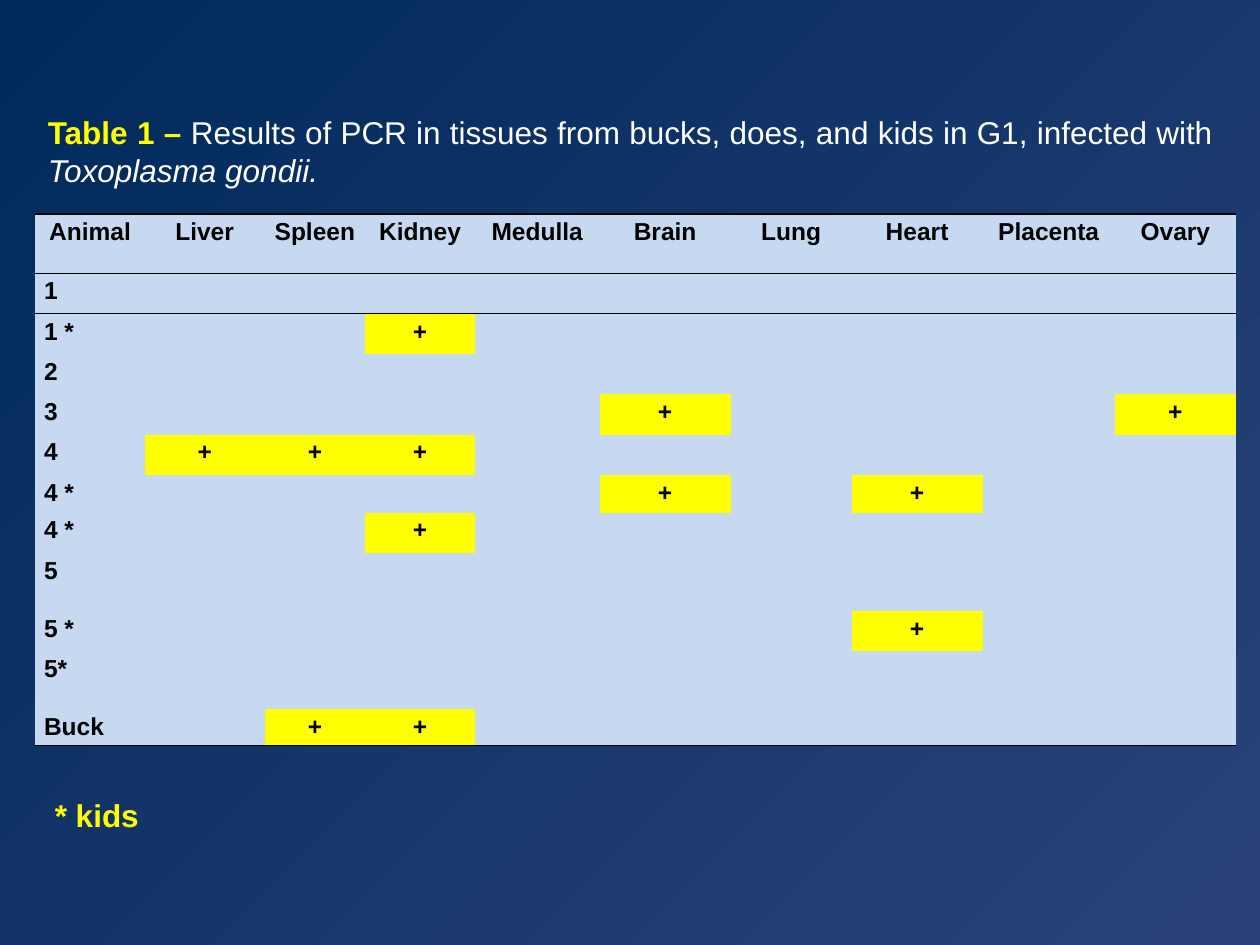
from lxml import etree
from pptx import Presentation
from pptx.dml.color import RGBColor
from pptx.enum import text as t
from pptx.oxml import ns
from pptx.util import Inches, Pt

NAVY = RGBColor(0x00, 0x29, 0x5C)
INDIGO = RGBColor(0x2A, 0x42, 0x78)
PALE_BLUE = RGBColor(0xC6, 0xD9, 0xF1)
YELLOW = RGBColor(0xFF, 0xFF, 0x00)
WHITE = RGBColor(0xFF, 0xFF, 0xFF)
BLACK = RGBColor(0x00, 0x00, 0x00)

NO_STYLE_NO_GRID = "{2D5ABB26-0587-4C30-8999-92F81FD0307C}"

TISSUES = ["Liver", "Spleen", "Kidney", "Medulla", "Brain",
           "Lung", "Heart", "Placenta", "Ovary"]
# Each animal with the tissues that tested positive
RESULTS = [
    ("1", []),
    ("1 *", ["Kidney"]),
    ("2", []),
    ("3", ["Brain", "Ovary"]),
    ("4", ["Liver", "Spleen", "Kidney"]),
    ("4 *", ["Brain", "Heart"]),
    ("4 *", ["Kidney"]),
    ("5", []),
    ("5 *", ["Heart"]),
    ("5*", []),
    ("Buck", ["Spleen", "Kidney"]),
]
COLUMN_WIDTHS = [0.87, 0.95, 0.8, 0.87, 0.99, 1.04, 0.96, 1.04, 1.05, 0.96]
ROW_HEIGHTS = [0.47, 0.32, 0.32, 0.32, 0.32, 0.32, 0.3, 0.32, 0.46, 0.32, 0.46, 0.29]


class SlideBuilder:
    """Holds the text style and the current slide."""

    font_name = "Arial"
    text_size = 18
    table_size = 14

    def __init__(self, presentation):
        self.slide = presentation.slides.add_slide(presentation.slide_layouts[5])

    def background(self, inner, outer):
        fill = self.slide.background.fill
        fill.gradient()
        for stop, color in zip(fill.gradient_stops, (inner, outer)):
            stop.color.rgb = color
        # Radiate from the bottom right corner
        linear = self.slide.element.find(".//" + ns.qn("a:lin"))
        circle = etree.Element(ns.qn("a:path"), {"path": "circle"})
        etree.SubElement(circle, ns.qn("a:fillToRect"), {"l": "100000", "t": "100000"})
        linear.getparent().replace(linear, circle)

    def run(self, paragraph, wording, color, size=None, bold=False, italic=False, font=None):
        run = paragraph.add_run()
        run.text = wording
        run.font.name = font or self.font_name
        run.font.size = Pt(size or self.text_size)
        run.font.bold = bold
        run.font.italic = italic
        run.font.color.rgb = color

    def place(self, shape, left, top, width, height):
        shape.left, shape.top = Inches(left), Inches(top)
        shape.width, shape.height = Inches(width), Inches(height)
        frame = shape.text_frame
        frame.word_wrap = True
        frame.auto_size = t.MSO_AUTO_SIZE.SHAPE_TO_FIT_TEXT
        return frame.paragraphs[0]

    def title(self, *box):
        shape = self.slide.shapes.title
        paragraph = self.place(shape, *box)
        shape.text_frame.vertical_anchor = t.MSO_ANCHOR.MIDDLE
        paragraph.alignment = t.PP_ALIGN.JUSTIFY
        return paragraph

    def text_box(self, *box):
        shape = self.slide.shapes.add_textbox(0, 0, 0, 0)
        return self.place(shape, *box)

    def table(self, left, top, widths, heights):
        frame = self.slide.shapes.add_table(
            len(heights), len(widths), Inches(left), Inches(top),
            Inches(sum(widths)), Inches(sum(heights)))
        table = frame.table
        table.first_row = table.horz_banding = False
        frame.element.find(".//" + ns.qn("a:tableStyleId")).text = NO_STYLE_NO_GRID
        for column, width in zip(table.columns, widths):
            column.width = Inches(width)
        for row, height in zip(table.rows, heights):
            row.height = Inches(height)
        return table

    def border(self, cell, side):
        properties = cell._tc.get_or_add_tcPr()
        line = etree.SubElement(properties, ns.qn("a:ln" + side), {"w": str(Pt(1))})
        solid = etree.SubElement(line, ns.qn("a:solidFill"))
        etree.SubElement(solid, ns.qn("a:srgbClr"), {"val": str(BLACK)})

    def cell(self, cell, wording, fill, centered, sides):
        for side in sides:
            self.border(cell, side)
        cell.fill.solid()
        cell.fill.fore_color.rgb = fill
        cell.margin_left = cell.margin_right = Inches(0.07)
        cell.margin_top = cell.margin_bottom = 0
        paragraph = cell.text_frame.paragraphs[0]
        paragraph.line_spacing = 1.15
        if centered:
            paragraph.alignment = t.PP_ALIGN.CENTER
        if wording:
            self.run(paragraph, wording, BLACK, self.table_size, bold=True)
        else:
            # Keep an empty cell from stretching its row
            end = etree.SubElement(paragraph._p, ns.qn("a:endParaRPr"))
            end.set("sz", str(self.table_size * 100))


def main():
    presentation = Presentation()
    presentation.slide_width, presentation.slide_height = Inches(10), Inches(7.5)
    builder = SlideBuilder(presentation)
    builder.background(INDIGO, NAVY)

    # Results table
    table = builder.table(0.28, 1.7, COLUMN_WIDTHS, ROW_HEIGHTS)
    rows = [["Animal"] + TISSUES]
    for animal, positives in RESULTS:
        rows.append([animal] + ["+" if tissue in positives else "" for tissue in TISSUES])
    border_sides = {0: "TB", 1: "T", len(rows) - 1: "B"}
    for r, row in enumerate(rows):
        for c, wording in enumerate(row):
            fill = YELLOW if wording == "+" else PALE_BLUE
            builder.cell(table.cell(r, c), wording, fill,
                         centered=r == 0 or c > 0, sides=border_sides.get(r, ""))

    # Table caption
    caption = builder.title(0.28, 0.84, 9.45, 0.71)
    builder.run(caption, "Table 1 – ", YELLOW, bold=True)
    builder.run(caption, "Results of PCR in tissues from bucks, does, and kids in G1, "
                "infected with ", WHITE)
    builder.run(caption, "Toxoplasma gondii.", WHITE, italic=True)

    # Footnote
    footnote = builder.text_box(0.28, 6.27, 3.07, 0.4)
    builder.run(footnote, " ", WHITE, font="Calibri")
    builder.run(footnote, "* kids", YELLOW, bold=True)

    presentation.save("out.pptx")


if __name__ == "__main__":
    main()
